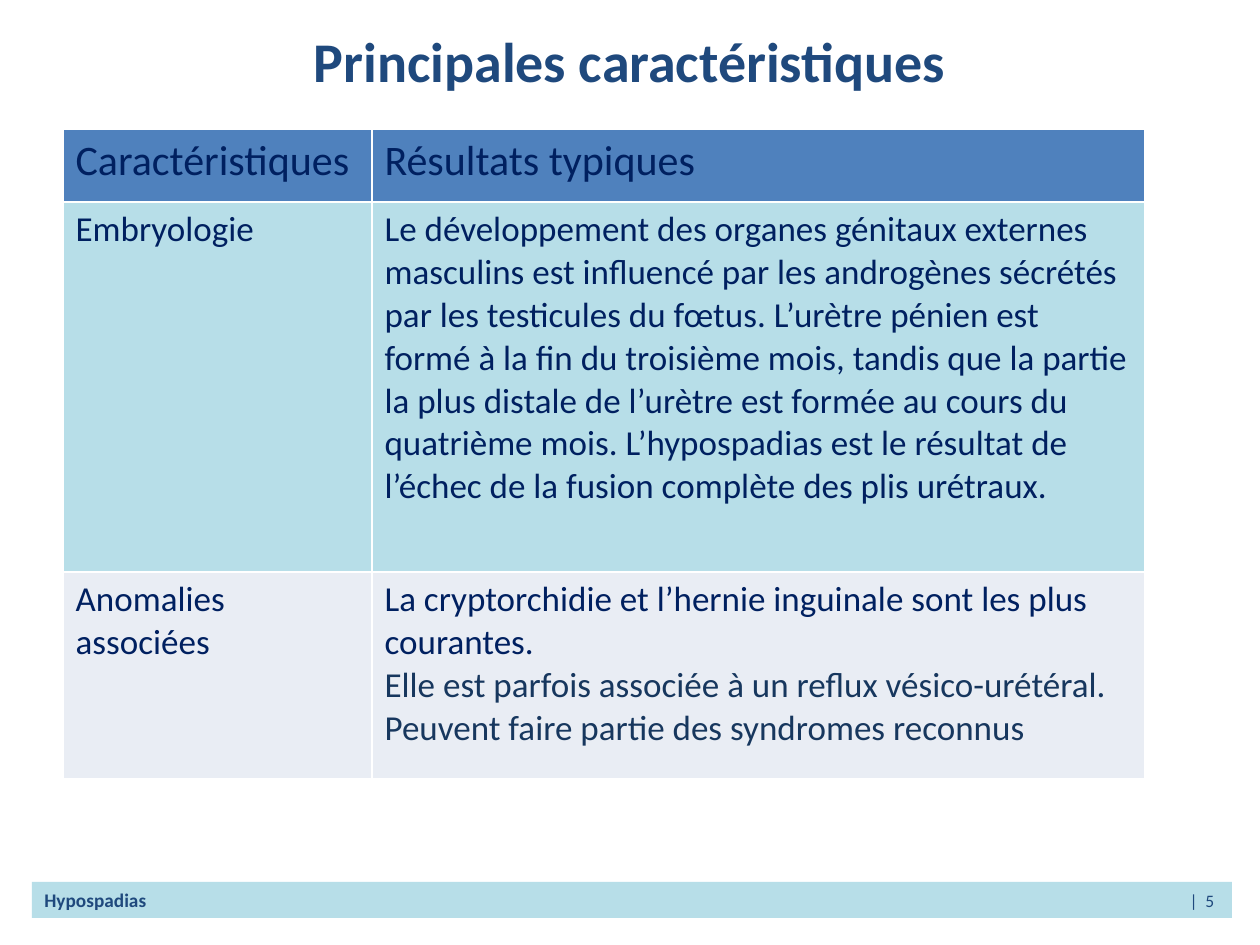
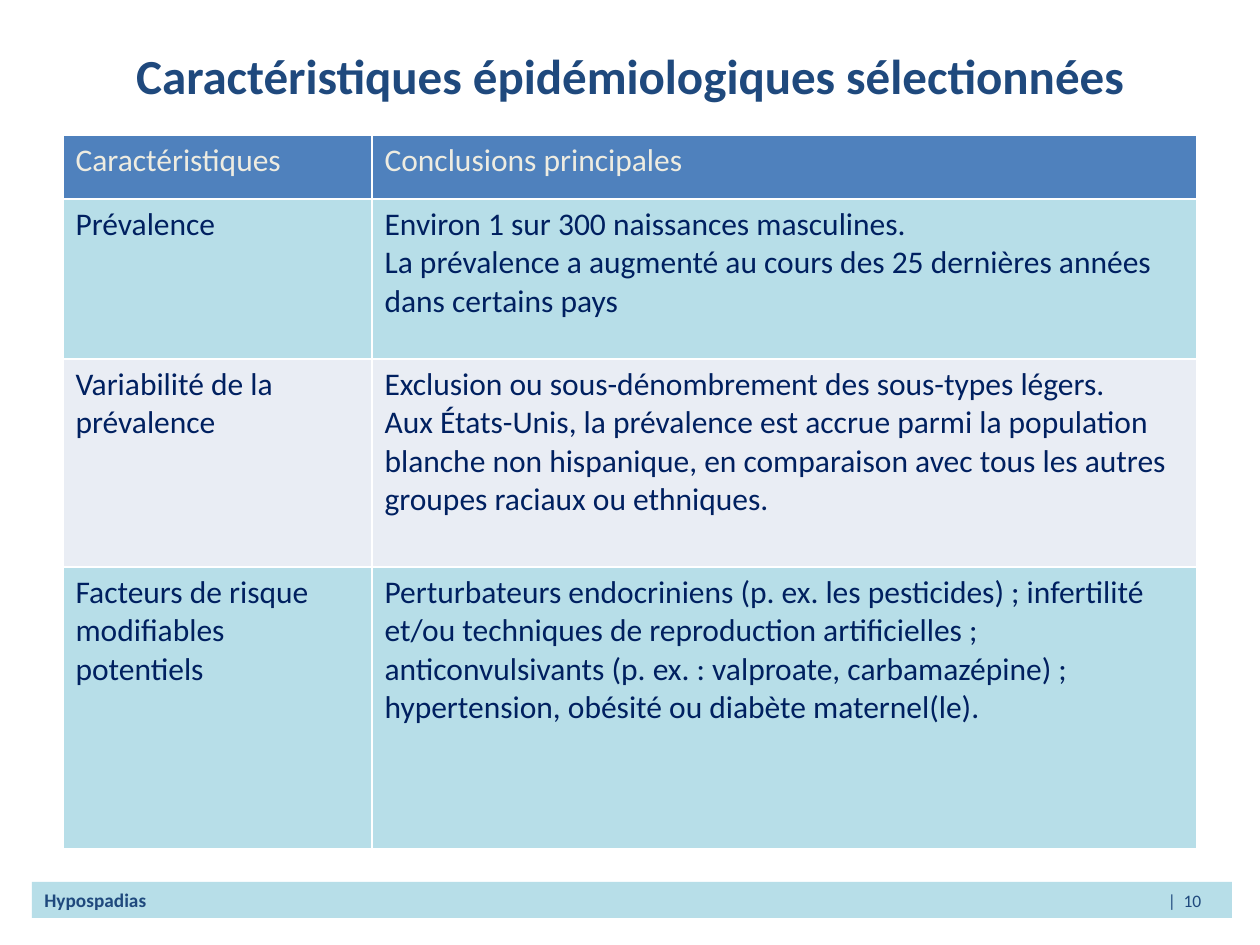
import pptx
import pptx.dml.color
import pptx.enum.shapes
import pptx.enum.text
import pptx.oxml
import pptx.oxml.ns
import pptx.util

PX = 914400 / 126
FONT = "Calibri"
WHITE = "FFFFFF"
TITLE_BLUE = "1F497D"
HEADER_BLUE = "4F81BD"
NAVY = "002060"
SLATE = "17375E"
CREAM = "EEECE1"
BAND = "B7DEE8"
BAND_FILLS = [BAND, "E9EDF4"]
LEFT = 63
LABEL_WIDTH = 309
FOOTER = "Hypospadias"


def px(length):
    return pptx.util.Emu(round(length * PX))


def color(value):
    return pptx.dml.color.RGBColor.from_string(value)


def fill_solid(target, value):
    target.fill.solid()
    target.fill.fore_color.rgb = color(value)


def style_span(span, size, value, bold=False):
    span.font.name = FONT
    span.font.size = pptx.util.Pt(size)
    span.font.bold = bold
    span.font.color.rgb = color(value)


def add_title(page, text, size, top, height):
    box = page.shapes.add_textbox(px(LEFT), px(top), px(1134), px(height))
    frame = box.text_frame
    frame.word_wrap = True
    frame.vertical_anchor = pptx.enum.text.MSO_ANCHOR.MIDDLE
    frame.text = text
    para = frame.paragraphs[0]
    para.alignment = pptx.enum.text.PP_ALIGN.CENTER
    style_span(para.runs[0], size, TITLE_BLUE, True)


def add_footer(page, number, number_end):
    band = page.shapes.add_shape(
        pptx.enum.shapes.MSO_SHAPE.RECTANGLE, px(32), px(882), px(1200), px(36))
    band.shadow.inherit = False
    fill_solid(band, BAND)
    band.line.fill.background()
    frame = band.text_frame
    frame.word_wrap = True
    frame.vertical_anchor = pptx.enum.text.MSO_ANCHOR.MIDDLE
    para = frame.paragraphs[0]
    para.alignment = pptx.enum.text.PP_ALIGN.LEFT
    for text, size, bold in [(FOOTER, 11, True), (f"\t|  {number}", 10, False)]:
        span = para.add_run()
        span.text = text
        style_span(span, size, TITLE_BLUE, bold)
    properties = para._p.get_or_add_pPr()
    properties.append(pptx.oxml.parse_xml(
        f'<a:tabLst {pptx.oxml.ns.nsdecls("a")}>'
        f'<a:tab pos="{px(number_end)}" algn="r"/></a:tabLst>'))


def add_borders(cell):
    properties = cell._tc.get_or_add_tcPr()
    for side in "LRTB":
        properties.append(pptx.oxml.parse_xml(
            f'<a:ln{side} {pptx.oxml.ns.nsdecls("a")} w="12700"><a:solidFill>'
            f'<a:srgbClr val="{WHITE}"/></a:solidFill></a:ln{side}>'))


def fill_cell(cell, lines, size, fill, text_color):
    add_borders(cell)
    fill_solid(cell, fill)
    cell.text_frame.text = "\n".join(lines)
    for para in cell.text_frame.paragraphs:
        style_span(para.runs[0], size, text_color)


def add_findings_table(page, top, findings_width, heights, rows, header_style, body_size):
    widths = [LABEL_WIDTH, findings_width]
    table = page.shapes.add_table(
        len(rows), 2, px(LEFT), px(top), px(sum(widths)), px(sum(heights))).table
    for column, width in zip(table.columns, widths):
        column.width = px(width)
    for index, (label, findings) in enumerate(rows):
        table.rows[index].height = px(heights[index])
        if index == 0:
            size, text_color = header_style
            fill = HEADER_BLUE
        else:
            size, text_color = body_size, NAVY
            fill = BAND_FILLS[(index - 1) % 2]
        fill_cell(table.cell(index, 0), [label], size, fill, text_color)
        fill_cell(table.cell(index, 1), findings, size, fill, text_color)
    return table


def add_features_page(deck):
    page = deck.slides.add_slide(deck.slide_layouts[6])
    add_footer(page, 5, 1170)
    add_title(page, "Principales caractéristiques", 32, 26, 68)
    rows = [
        ("Caractéristiques", ["Résultats typiques"]),
        ("Embryologie", [
            "Le développement des organes génitaux externes masculins est influencé "
            "par les androgènes sécrétés par les testicules du fœtus. L’urètre pénien "
            "est formé à la fin du troisième mois, tandis que la partie la plus distale "
            "de l’urètre est formée au cours du quatrième mois. L’hypospadias est le "
            "résultat de l’échec de la fusion complète des plis urétraux."]),
        ("Anomalies associées", [
            "La cryptorchidie et l’hernie inguinale sont les plus courantes.",
            "Elle est parfois associée à un reflux vésico-urétéral.",
            "Peuvent faire partie des syndromes reconnus"]),
    ]
    table = add_findings_table(page, 129, 773, [73, 370, 207], rows, (24, NAVY), 20)
    for para in table.cell(2, 1).text_frame.paragraphs[1:]:
        para.runs[0].font.color.rgb = color(SLATE)


def add_epidemiology_page(deck):
    page = deck.slides.add_slide(deck.slide_layouts[6])
    add_footer(page, 10, 1157)
    add_title(page, "Caractéristiques épidémiologiques sélectionnées", 28, -4, 158)
    rows = [
        ("Caractéristiques", ["Conclusions principales"]),
        ("Prévalence", [
            "Environ 1 sur 300 naissances masculines.",
            "La prévalence a augmenté au cours des 25 dernières années dans certains pays"]),
        ("Variabilité de la prévalence", [
            "Exclusion ou sous-dénombrement des sous-types légers.",
            "Aux États-Unis, la prévalence est accrue parmi la population blanche non "
            "hispanique, en comparaison avec tous les autres groupes raciaux ou ethniques."]),
        ("Facteurs de risque modifiables potentiels", [
            "Perturbateurs endocriniens (p. ex. les pesticides) ; infertilité et/ou "
            "techniques de reproduction artificielles ; anticonvulsivants (p. ex. : "
            "valproate, carbamazépine) ; hypertension, obésité ou diabète maternel(le)."]),
    ]
    add_findings_table(page, 135, 825, [64, 160, 208, 282], rows, (18, CREAM), 18)


def main():
    deck = pptx.Presentation()
    deck.slide_width = px(1260)
    deck.slide_height = px(945)
    add_features_page(deck)
    add_epidemiology_page(deck)
    deck.save("out.pptx")


if __name__ == "__main__":
    main()
